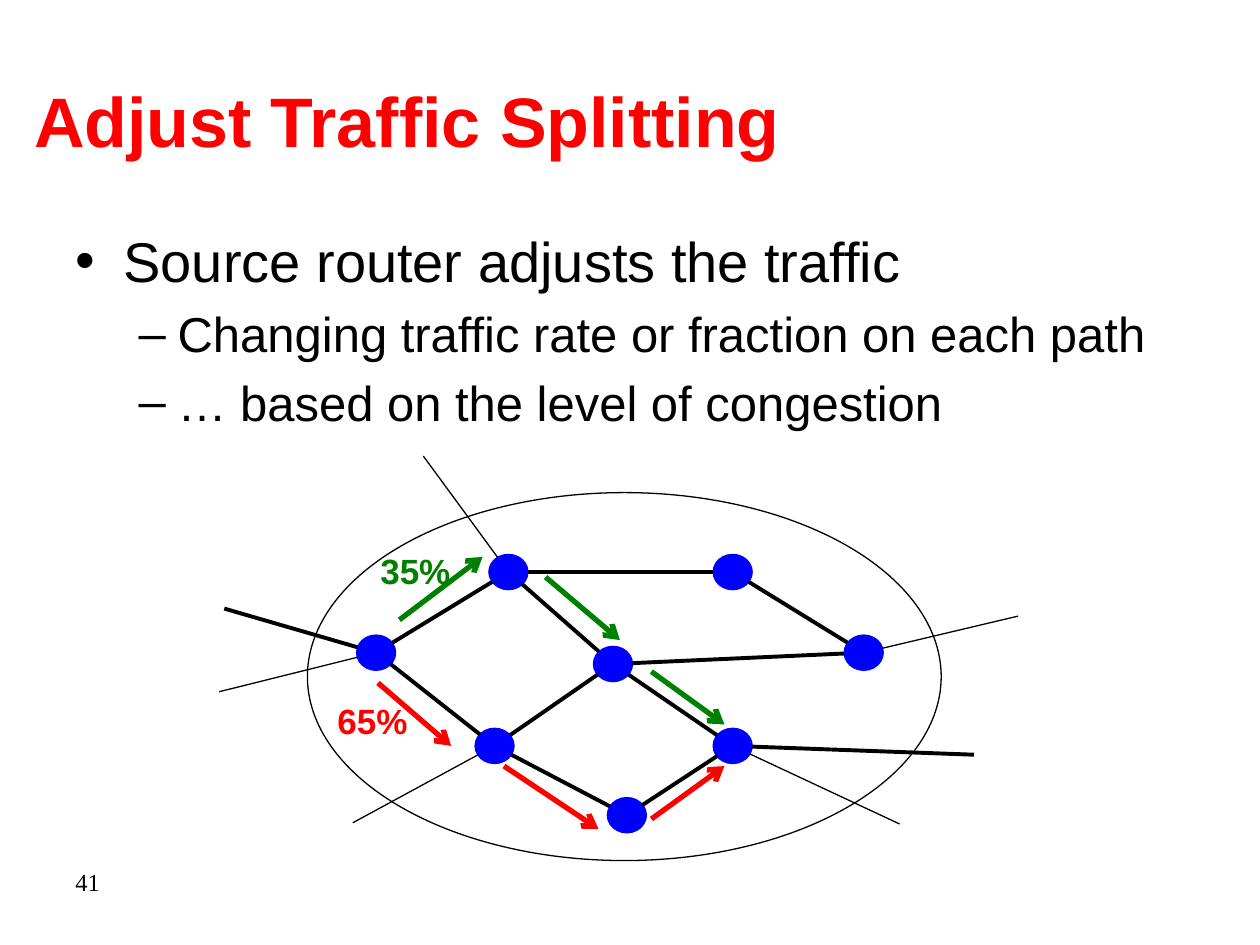
from math import hypot

from pptx import Presentation
from pptx.dml.color import RGBColor
from pptx.enum import shapes as sh, text as tx
from pptx.oxml import ns, xmlchemy as xc
from pptx.util import Inches, Pt

HUES = {"title": "FF0000", "text": "000000", "router": "0000FF", "link": "000000",
        "upper": "008000", "lower": "FF0000"}
THIN, THICK, BOLD = 0.75, 2.25, 3

# level: size in points, left margin and hanging indent in inches, bullet
LEVELS = [(32, 0.38, -0.38, "•"), (28, 0.81, -0.31, "–")]
ITEMS = [(0, "Source router adjusts the traffic"),
         (1, "Changing traffic rate or fraction on each path"),
         (1, "… based on the level of congestion")]

# All network positions are inches from the corner of the network's box.
CLOUD = (0.74, 0.31, 5.03, 2.92)
ROUTER = (0.31, 0.28)
ROUTERS = {"source": (1.13, 1.44), "low": (2.07, 2.18), "high": (2.18, 0.8),
           "mid": (3.01, 1.53), "exit": (3.96, 2.18), "north": (3.96, 0.8),
           "south": (3.12, 2.73), "east": (5, 1.44)}
LINKS = [("source", "high"), ("source", "low"), ("high", "mid"), ("low", "south"),
         ("low", "mid"), ("mid", "exit"), ("south", "exit"), ("mid", "east"),
         ("high", "north"), ("north", "east")]
# router, far end outside the cloud, width
OUTER = [("source", (0.08, 1.23), THICK), ("source", (0.04, 1.89), THIN),
         ("exit", (6.03, 2.39), THICK), ("exit", (5.44, 2.94), THIN),
         ("east", (6.38, 1.29), THIN), ("high", (1.66, 0.02), THIN),
         ("low", (1.1, 2.93), THIN)]
# route: share of traffic, label corner, arrows from start to end
ROUTES = {
    "upper": ("35%", (1.22, 0.71), [((1.47, 1.32), (2.13, 0.82)),
                                    ((2.63, 0.98), (3.22, 1.48)),
                                    ((3.47, 1.73), (4.05, 2.15))]),
    "lower": ("65%", (0.88, 1.9), [((1.3, 1.82), (1.88, 2.32)),
                                   ((2.3, 2.48), (3.05, 2.98)),
                                   ((3.47, 2.9), (4.05, 2.48))]),
}


def color(key):
    return RGBColor.from_string(HUES[key])


def style(font, key, **form):
    for attr, val in {"name": "Arial", "bold": False, **form}.items():
        setattr(font, attr, val)
    font.color.rgb = color(key)


def place(shape, box):
    for attr, val in zip(("left", "top", "width", "height"), box):
        setattr(shape, attr, Inches(val))


def add_title(slide, box):
    title = slide.shapes.title
    place(title, box)
    frame = title.text_frame
    frame.text = "Adjust Traffic Splitting"
    frame.vertical_anchor = tx.MSO_ANCHOR.MIDDLE
    para = frame.paragraphs[0]
    para.alignment = tx.PP_ALIGN.LEFT
    style(para.runs[0].font, "title", size=Pt(40), bold=True)


def add_body(slide, box):
    body = slide.placeholders[1]
    place(body, box)
    frame = body.text_frame
    frame.auto_size = tx.MSO_AUTO_SIZE.NONE
    frame.text = "\n".join(words for _, words in ITEMS)
    for para, (level, _) in zip(frame.paragraphs, ITEMS):
        size, left, hang, mark = LEVELS[level]
        para.level = level
        props = para._p.get_or_add_pPr()
        props.set("marL", str(Inches(left)))
        props.set("indent", str(Inches(hang)))
        bullet = xc.OxmlElement("a:buChar")
        bullet.set("char", mark)
        props.append(bullet)
        style(para.runs[0].font, "text", size=Pt(size))


def add_label(slide, box, words, key, **form):
    frame = slide.shapes.add_textbox(*map(Inches, box)).text_frame
    frame.word_wrap = False
    frame.text = words
    style(frame.paragraphs[0].runs[0].font, key, **form)


def add_oval(slide, box, key, filled):
    oval = slide.shapes.add_shape(sh.MSO_SHAPE.OVAL, *map(Inches, box))
    oval.shadow.inherit = False
    if filled:
        oval.fill.solid()
        oval.fill.fore_color.rgb = color(key)
    else:
        oval.fill.background()
    oval.line.color.rgb = color(key)
    oval.line.width = Pt(THIN)


def add_line(slide, start, end, key, width, arrow=False):
    line = slide.shapes.add_connector(
        sh.MSO_CONNECTOR.STRAIGHT, *map(Inches, start + end))
    line.line.color.rgb = color(key)
    line.line.width = Pt(width)
    props = line._element.spPr
    if arrow:
        tip = xc.OxmlElement("a:tailEnd")
        tip.set("type", "arrow")
        props.find(ns.qn("a:ln")).append(tip)
    props.append(xc.OxmlElement("a:effectLst"))


def center(router):
    return tuple(pos + side / 2 for pos, side in zip(ROUTERS[router], ROUTER))


def rim(router, goal):
    """Point where the line from the router's centre to goal leaves its oval."""
    mid = center(router)
    gap = [far - near for far, near in zip(goal, mid)]
    reach = hypot(*(2 * dist / side for dist, side in zip(gap, ROUTER)))
    return tuple(near + dist / reach for near, dist in zip(mid, gap))


def add_network(slide, left, top):
    def move(x, y, *size):
        return (left + x, top + y, *size)

    for spot in ROUTERS.values():
        add_oval(slide, move(*spot, *ROUTER), "router", filled=True)
    add_oval(slide, move(*CLOUD), "link", filled=False)

    for one, two in LINKS:
        start, end = rim(one, center(two)), rim(two, center(one))
        add_line(slide, move(*start), move(*end), "link", THICK)
    for router, far, width in OUTER:
        add_line(slide, move(*rim(router, far)), move(*far), "link", width)

    for key, (share, spot, hops) in ROUTES.items():
        for start, end in hops:
            add_line(slide, move(*start), move(*end), key, BOLD, arrow=True)
        add_label(slide, move(*spot, 0.76, 0.44), share, key, size=Pt(20), bold=True)


def main():
    deck = Presentation()
    deck.slide_width, deck.slide_height = Inches(10), Inches(7.5)
    slide = deck.slides.add_slide(deck.slide_layouts[1])
    add_title(slide, (0.17, 0.32, 9.58, 1.25))
    add_body(slide, (0.5, 1.75, 9, 4.95))
    add_network(slide, 1.7, 3.6)
    add_label(slide, (0.5, 6.83, 2.33, 0.52), "41", "text",
              name="Times New Roman", size=Pt(14))
    deck.save("out.pptx")


if __name__ == "__main__":
    main()
